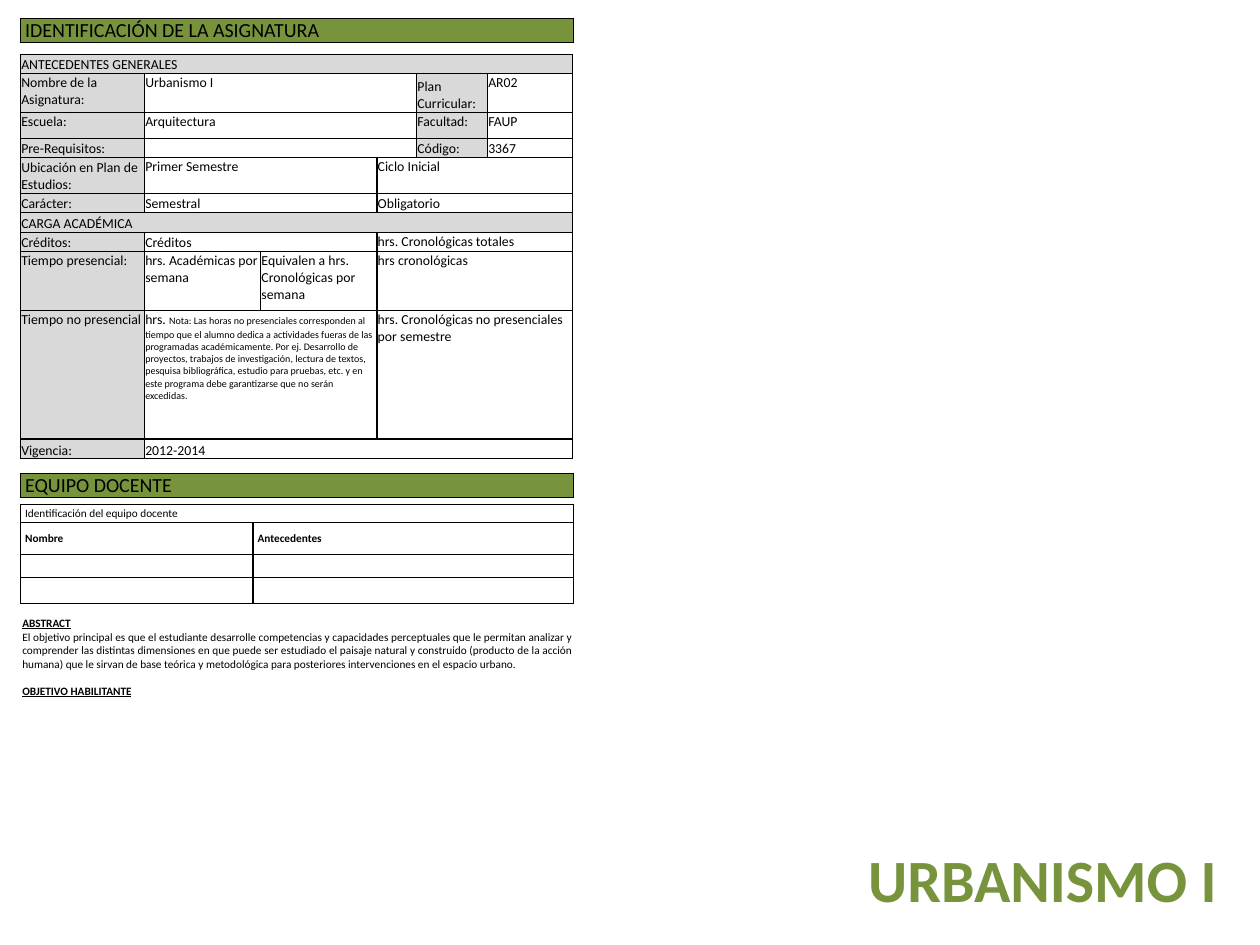
from lxml import etree
from pptx import Presentation
from pptx.dml.color import RGBColor
from pptx.enum.text import MSO_ANCHOR, PP_ALIGN
from pptx.oxml.ns import qn
from pptx.util import Cm, Pt

TOP, MID, LOW = MSO_ANCHOR.TOP, MSO_ANCHOR.MIDDLE, MSO_ANCHOR.BOTTOM
RIGHT, FULL = PP_ALIGN.RIGHT, PP_ALIGN.JUSTIFY

HUES = {"green": "77933C", "gray": "D9D9D9", "ink": "000000"}
PLAIN = {"name": "Calibri", "size": Pt(11)}
SMALL = {**PLAIN, "size": Pt(9)}
NOTE = {**PLAIN, "size": Pt(8)}
BOLD = {**SMALL, "bold": True}
HEAD = {**BOLD, "underline": True}
BAND = {**PLAIN, "size": Pt(16)}
TITLE = {**PLAIN, "size": Pt(48), "bold": True}

TIGHT = {"margin_left": Cm(0.02), "margin_right": Cm(0.02),
         "margin_top": Cm(0.02), "margin_bottom": 0}
WIDE = {"margin_left": Cm(0.13), "margin_right": Cm(0.13),
        "margin_top": 0, "margin_bottom": 0}

LEFT = 0.58
FULL_W = 15.6

ABSTRACT = (
    "El objetivo principal es que el estudiante desarrolle competencias y "
    "capacidades perceptuales que le permitan analizar y comprender las "
    "distintas dimensiones en que puede ser estudiado el paisaje natural y "
    "construido (producto de la acción humana) que le sirvan de base teórica "
    "y metodológica para posteriores intervenciones en el espacio urbano.")
HOURS = (
    "Nota: Las horas no presenciales corresponden al tiempo que el alumno "
    "dedica a actividades fueras de las programadas académicamente. Por ej. "
    "Desarrollo de proyectos, trabajos de investigación, lectura de textos, "
    "pesquisa bibliográfica, estudio para pruebas, etc. y en este programa "
    "debe garantizarse que no serán excedidas.")


def apply(item, form):
    for key, value in form.items():
        setattr(item, key, value)


def add_run(para, text, form, hue="ink"):
    run = para.add_run()
    run.text = text
    apply(run.font, form)
    run.font.color.rgb = RGBColor.from_string(HUES[hue])


def add_edges(cell):
    props = cell._tc.get_or_add_tcPr()
    for spot, side in enumerate(("lnL", "lnR", "lnT", "lnB")):
        line = etree.Element(qn("a:" + side), w=str(Pt(1)))
        fill = etree.SubElement(line, qn("a:solidFill"))
        etree.SubElement(fill, qn("a:srgbClr"), val=HUES["ink"])
        props.insert(spot, line)


def add_grid(slide, top, cols, rows, form):
    frame = slide.shapes.add_table(len(rows), len(cols), Cm(LEFT), Cm(top),
                                   Cm(sum(cols)), Cm(sum(rows)))
    grid = frame.table
    apply(grid, {"first_row": False, "horz_banding": False})
    for col, width in zip(grid.columns, cols):
        col.width = Cm(width)
    for row, height in zip(grid.rows, rows):
        row.height = Cm(height)
    for cell in grid.iter_cells():
        apply(cell, form)
        cell.fill.background()
        add_edges(cell)
        para = cell.text_frame.paragraphs[0]
        etree.SubElement(para._p, qn("a:endParaRPr"), sz="900")
    return grid


def fill_cell(grid, row, col, text, font=PLAIN, span=1, hue=None, anchor=TOP):
    cell = grid.cell(row, col)
    if span > 1:
        cell.merge(grid.cell(row, col + span - 1))
    cell.vertical_anchor = anchor
    if hue:
        cell.fill.solid()
        cell.fill.fore_color.rgb = RGBColor.from_string(HUES[hue])
    if text:
        add_run(cell.text_frame.paragraphs[0], text, font)
    return cell


def add_band(slide, top, text):
    grid = add_grid(slide, top, [FULL_W], [0.69], WIDE)
    fill_cell(grid, 0, 0, text, BAND, hue="green")


def add_box(slide, left, top, width, height):
    box = slide.shapes.add_textbox(Cm(left), Cm(top), Cm(width), Cm(height))
    box.text_frame.word_wrap = True
    return box.text_frame


def add_facts(slide):
    cols = [3.5, 3.28, 3.28, 1.12, 2, 2.4]
    rows = [0.54, 1.1, 0.73, 0.54, 1.02, 0.54, 0.56, 0.54, 1.67, 3.62, 0.56]
    grid = add_grid(slide, 1.53, cols, rows, TIGHT)
    for row, text in ((0, "ANTECEDENTES GENERALES"), (6, "CARGA ACADÉMICA")):
        fill_cell(grid, row, 0, text, span=6, hue="gray", anchor=LOW)

    tags = {1: ("Nombre de la Asignatura:", TOP), 2: ("Escuela:", TOP),
            3: ("Pre-Requisitos:", LOW),
            4: ("Ubicación en Plan de Estudios:", LOW),
            5: ("Carácter:", LOW), 7: ("Créditos:", LOW),
            8: ("Tiempo presencial:", TOP), 9: ("Tiempo no presencial", TOP),
            10: ("Vigencia:", LOW)}
    for row, (text, anchor) in tags.items():
        fill_cell(grid, row, 0, text, hue="gray", anchor=anchor)

    codes = [("Urbanismo I", "Plan Curricular:", "AR02", LOW, TOP),
             ("Arquitectura", "Facultad:", "FAUP", TOP, TOP),
             ("", "Código:", "3367", LOW, LOW)]
    for row, (text, tag, code, mid, end) in enumerate(codes, 1):
        fill_cell(grid, row, 1, text, span=3)
        fill_cell(grid, row, 4, tag, hue="gray", anchor=mid)
        fill_cell(grid, row, 5, code, anchor=end)

    pairs = {4: ("Primer Semestre", TOP, "Ciclo Inicial", TOP),
             5: ("Semestral", LOW, "Obligatorio", LOW),
             7: ("Créditos", LOW, "hrs. Cronológicas totales", TOP),
             9: ("hrs. ", TOP,
                 "hrs. Cronológicas no presenciales por semestre", TOP)}
    for row, (text, anchor, total, end) in pairs.items():
        fill_cell(grid, row, 1, text, span=2, anchor=anchor)
        fill_cell(grid, row, 3, total, span=3, anchor=end)
    add_run(grid.cell(9, 1).text_frame.paragraphs[0], HOURS, NOTE)

    fill_cell(grid, 8, 1, "hrs. Académicas por semana")
    fill_cell(grid, 8, 2, "Equivalen a hrs. Cronológicas por semana")
    fill_cell(grid, 8, 3, "hrs cronológicas", span=3)
    fill_cell(grid, 10, 1, "2012-2014", span=5, anchor=LOW)


def add_team(slide):
    grid = add_grid(slide, 14.24, [6.56, 9.04], [0.51, 0.9, 0.66, 0.73], WIDE)
    fill_cell(grid, 0, 0, "Identificación del equipo docente", SMALL,
              span=2, anchor=MID)
    for col, text in enumerate(("Nombre", "Antecedentes")):
        fill_cell(grid, 1, col, text, BOLD, anchor=MID)


def add_goals(slide):
    frame = add_box(slide, 0.38, 17.27, 16, 2.57)
    parts = [("ABSTRACT", HEAD, 0), (ABSTRACT, SMALL, 0),
             ("OBJETIVO HABILITANTE", HEAD, 11)]
    for spot, (text, font, gap) in enumerate(parts):
        para = frame.add_paragraph() if spot else frame.paragraphs[0]
        apply(para, {"alignment": FULL, "space_before": Pt(gap)})
        add_run(para, text, font)


def add_title(slide):
    para = add_box(slide, 19.18, 23.65, 15.8, 2.31).paragraphs[0]
    para.alignment = RIGHT
    add_run(para, "URBANISMO I ", TITLE, "green")


def main():
    deck = Presentation()
    apply(deck, {"slide_width": Cm(35.56), "slide_height": Cm(26.67)})
    slide = deck.slides.add_slide(deck.slide_layouts[6])
    add_band(slide, 13.36, "EQUIPO DOCENTE")
    add_title(slide)
    add_band(slide, 0.52, "IDENTIFICACIÓN DE LA ASIGNATURA")
    add_goals(slide)
    add_team(slide)
    add_facts(slide)
    deck.save("out.pptx")


if __name__ == "__main__":
    main()
